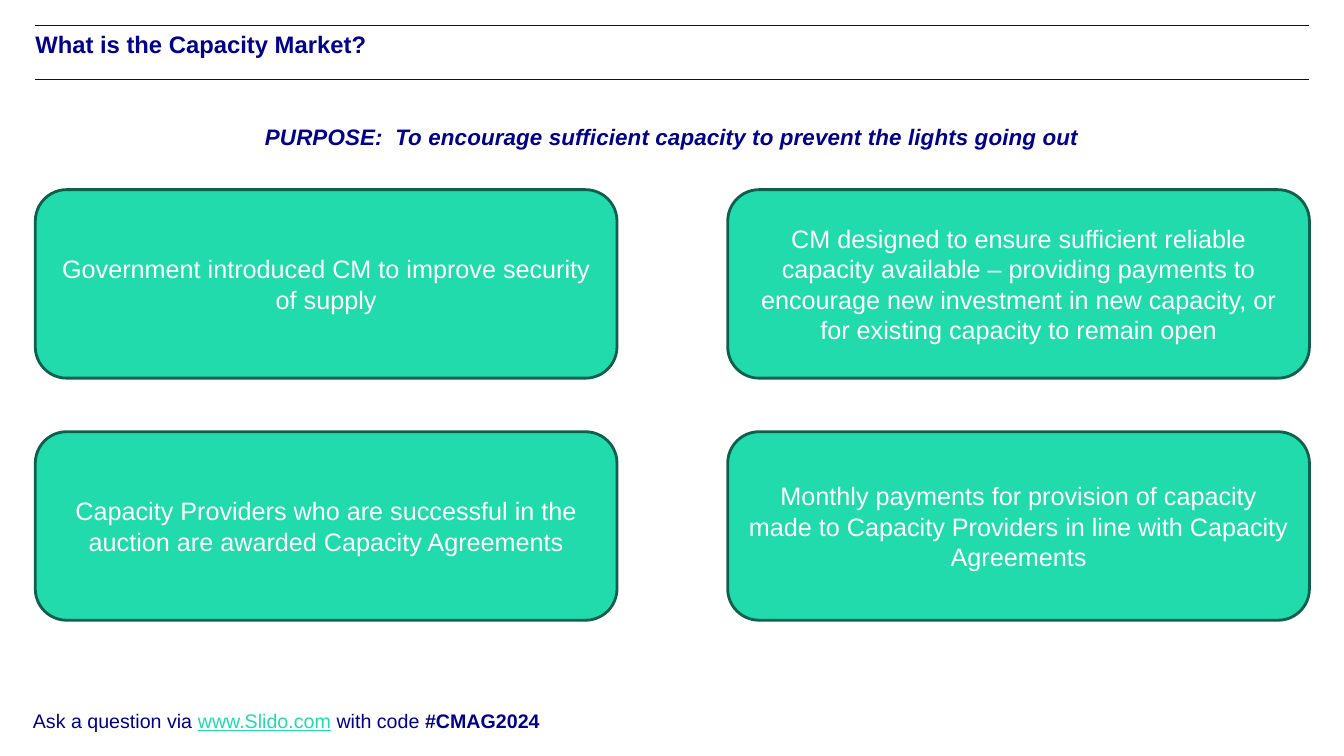
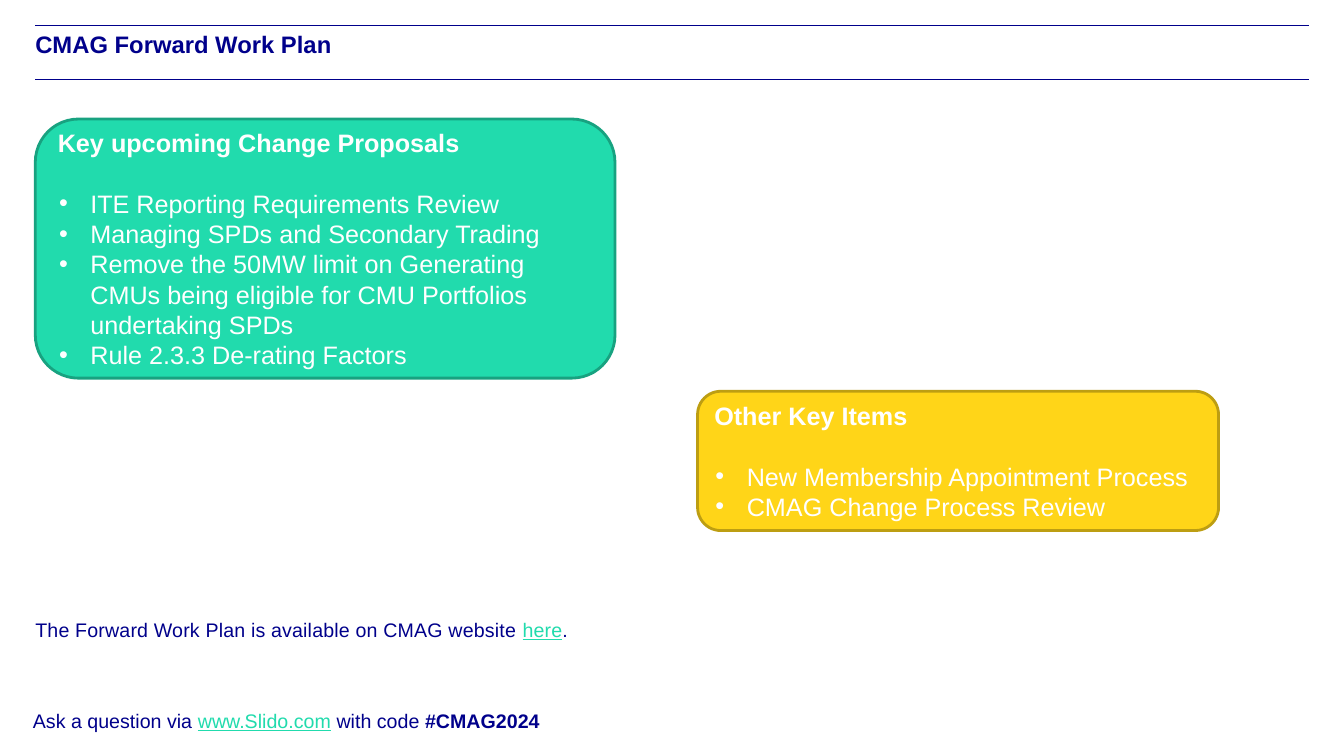
from dataclasses import dataclass
from typing import Optional

from lxml import etree
from pptx import Presentation
from pptx import util as u
from pptx.dml.color import RGBColor
from pptx.enum import shapes, text
from pptx.oxml import ns


@dataclass(frozen=True)
class Theme:
    font: str = "Arial"
    navy: str = "00008B"
    green: str = "21DBAD"
    green_dark: str = "0E604C"
    green_mid: str = "18A280"
    yellow: str = "FFD518"
    yellow_dark: str = "BD9E12"
    white: str = "FFFFFF"
    title_size: int = 17
    purpose_size: int = 16
    card_size: int = 18
    note_size: int = 14


@dataclass(frozen=True)
class Area:
    """A rectangle in centimetres."""
    left: float
    top: float
    width: float
    height: float

    def lengths(self) -> tuple:
        return tuple(u.Cm(n) for n in (self.left, self.top, self.width, self.height))


@dataclass(frozen=True)
class Span:
    words: str
    bold: bool = False
    link: bool = False


@dataclass(frozen=True)
class Style:
    size: int
    color: str
    bold: bool = False
    italic: bool = False
    align: text.PP_ALIGN = text.PP_ALIGN.LEFT
    spacing: Optional[int] = None  # hundredths of a point


@dataclass(frozen=True)
class Panel:
    area: Area
    fill: str
    line: str
    heading: str
    items: tuple


THEME = Theme()
MARGIN, CONTENT_WIDTH = 0.89, 32.11
RULE_TOPS = (0.64, 2.01)
TITLE_AREA = Area(MARGIN, 0.76, CONTENT_WIDTH, 1.24)
FOOTER_AREA = Area(0.58, 17.73, 14.25, 0.86)
FOOTER = (Span("Ask a question via "), Span("www.Slido.com", link=True),
          Span(" with code "), Span("#CMAG2024", bold=True))

TITLE = Style(THEME.title_size, THEME.navy, bold=True)
NOTE = Style(THEME.note_size, THEME.navy)
BODY_NOTE = Style(THEME.note_size, THEME.navy, spacing=10)
PURPOSE = Style(THEME.purpose_size, THEME.navy, bold=True, italic=True,
                align=text.PP_ALIGN.CENTER, spacing=10)
CARD = Style(THEME.card_size, THEME.white, align=text.PP_ALIGN.CENTER)
HEADING = Style(THEME.card_size, THEME.white, bold=True)
ITEM = Style(THEME.card_size, THEME.white)

# Cards of the first slide, row by row
CARD_WIDTH, CARD_HEIGHT = 14.66, 4.75
CARD_TOP, ROW_PITCH = 4.78, 6.1
CARDS = (
    ("Government introduced CM to improve security of supply",
     "CM designed to ensure sufficient reliable capacity available – providing payments to "
     "encourage new investment in new capacity, or for existing capacity to remain open"),
    ("Capacity Providers who are successful in the auction are awarded Capacity Agreements",
     "Monthly payments for provision of capacity made to Capacity Providers in line with "
     "Capacity Agreements"),
)

# Panels of the second slide
PANELS = (
    Panel(Area(MARGIN, 3.0, 14.61, 6.53), THEME.green, THEME.green_mid,
          "Key upcoming Change Proposals",
          ("ITE Reporting Requirements Review",
           "Managing SPDs and Secondary Trading",
           "Remove the 50MW limit on Generating CMUs being eligible for CMU Portfolios "
           "undertaking SPDs",
           "Rule 2.3.3 De-rating Factors")),
    Panel(Area(17.58, 9.86, 13.13, 3.51), THEME.yellow, THEME.yellow_dark,
          "Other Key Items",
          ("New Membership Appointment Process", "CMAG Change Process Review")),
)


def rgb(color: str) -> RGBColor:
    return RGBColor.from_string(color)


def write(para, spans: tuple, style: Style) -> None:
    para.alignment = style.align
    font = para.font
    font.name, font.size = THEME.font, u.Pt(style.size)
    font.bold, font.italic = style.bold, style.italic
    font.color.rgb = rgb(style.color)
    for span in spans:
        run = para.add_run()
        run.text = span.words
        if span.bold:
            run.font.bold = True
        if span.link:
            run.font.underline = True
            run.font.color.rgb = rgb(THEME.green)
        if style.spacing:
            run._r.get_or_add_rPr().set("spc", str(style.spacing))


def add_bullet(para) -> None:
    props = para._p.get_or_add_pPr()
    props.set("marL", str(u.Cm(0.82)))
    props.set("indent", str(u.Cm(-0.79)))
    etree.SubElement(props, ns.qn("a:buFont")).set("typeface", THEME.font)
    etree.SubElement(props, ns.qn("a:buChar")).set("char", "•")


def add_text(page, area: Area, spans: tuple, style: Style, inset: bool = False) -> None:
    frame = page.shapes.add_textbox(*area.lengths()).text_frame
    frame.word_wrap = True
    if not inset:
        frame.margin_left = frame.margin_right = frame.margin_top = frame.margin_bottom = 0
    write(frame.paragraphs[0], spans, style)


def add_rule(page, top: float) -> None:
    rule = page.shapes.add_connector(
        shapes.MSO_CONNECTOR.STRAIGHT, u.Cm(MARGIN), u.Cm(top),
        u.Cm(MARGIN + CONTENT_WIDTH), u.Cm(top))
    rule.line.color.rgb = rgb(THEME.navy)
    rule.line.width = u.Pt(0.5)
    etree.SubElement(rule._element.spPr, ns.qn("a:effectLst"))


def add_box(page, area: Area, fill: str, line: str):
    """Draw a rounded box and return its text frame."""
    box = page.shapes.add_shape(shapes.MSO_SHAPE.ROUNDED_RECTANGLE, *area.lengths())
    box.shadow.inherit = False
    box.fill.solid()
    box.fill.fore_color.rgb = rgb(fill)
    box.line.color.rgb = rgb(line)
    box.line.width = u.Pt(2)
    frame = box.text_frame
    frame.word_wrap = True
    frame.vertical_anchor = text.MSO_ANCHOR.MIDDLE
    return frame


def add_panel(page, panel: Panel) -> None:
    frame = add_box(page, panel.area, panel.fill, panel.line)
    heading = frame.paragraphs[0]
    write(heading, (Span(panel.heading),), HEADING)
    heading.space_after = u.Pt(21.6)
    for item in panel.items:
        para = frame.add_paragraph()
        add_bullet(para)
        write(para, (Span(item),), ITEM)


def add_page(deck, title: str):
    """Add a slide with the shared rules, footer and title."""
    page = deck.slides.add_slide(deck.slide_layouts[6])
    for top in RULE_TOPS:
        add_rule(page, top)
    add_text(page, FOOTER_AREA, FOOTER, NOTE, inset=True)
    add_text(page, TITLE_AREA, (Span(title),), TITLE)
    return page


def build_market_page(deck) -> None:
    page = add_page(deck, "What is the Capacity Market?")
    add_text(page, Area(MARGIN, 3.1, CONTENT_WIDTH, 0.8),
             (Span("PURPOSE:  To encourage sufficient capacity to prevent the lights going out"),),
             PURPOSE)
    column_pitch = CONTENT_WIDTH - CARD_WIDTH
    for row, cards in enumerate(CARDS):
        for column, words in enumerate(cards):
            area = Area(MARGIN + column * column_pitch, CARD_TOP + row * ROW_PITCH,
                        CARD_WIDTH, CARD_HEIGHT)
            frame = add_box(page, area, THEME.green, THEME.green_dark)
            write(frame.paragraphs[0], (Span(words),), CARD)


def build_plan_page(deck) -> None:
    page = add_page(deck, "CMAG Forward Work Plan")
    add_text(page, Area(MARGIN, 15.56, 29.82, 1.28),
             (Span("The Forward Work Plan is available on CMAG website "),
              Span("here", link=True), Span(".")), BODY_NOTE)
    for panel in PANELS:
        add_panel(page, panel)


def main() -> None:
    deck = Presentation()
    deck.slide_width, deck.slide_height = u.Cm(33.87), u.Cm(19.05)
    build_market_page(deck)
    build_plan_page(deck)
    deck.save("out.pptx")


if __name__ == "__main__":
    main()
